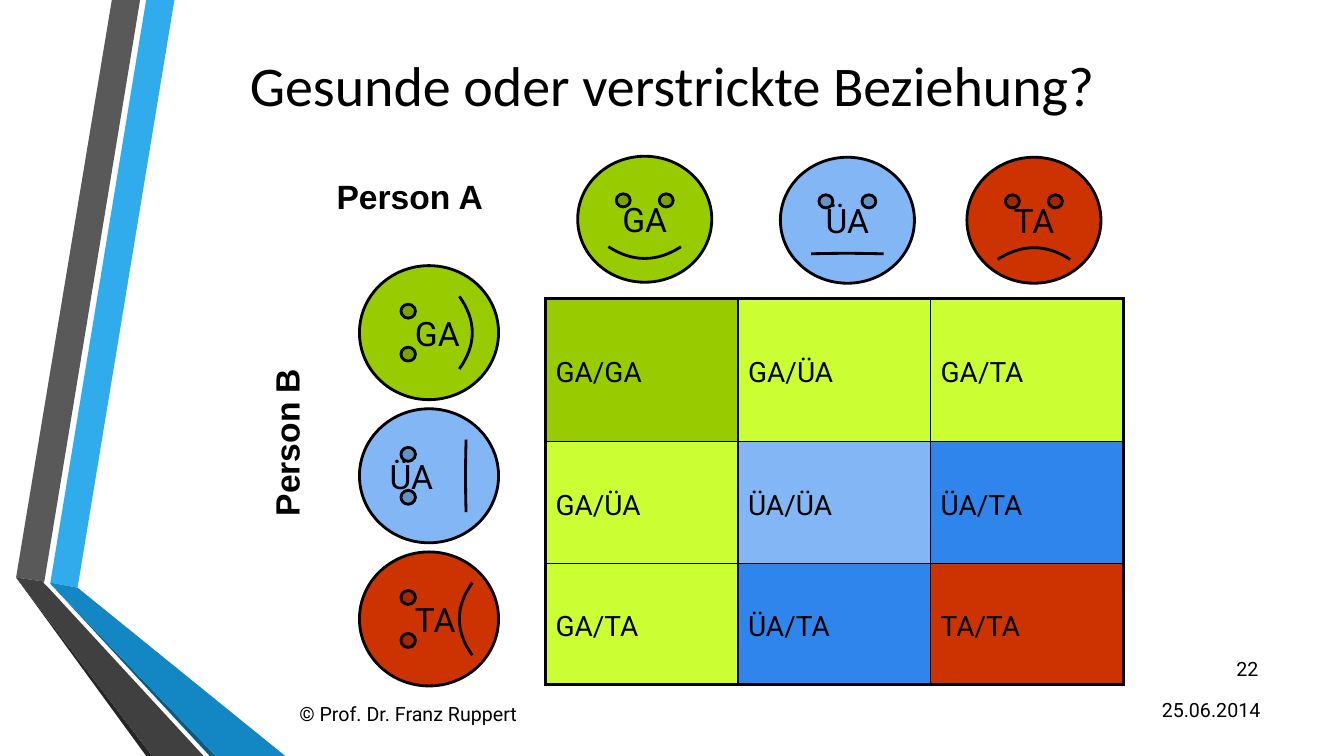
from lxml import etree
from pptx import Presentation
from pptx import util as u
from pptx.dml.color import RGBColor
from pptx.enum import shapes, text
from pptx.oxml.ns import qn

PX = 9144
SIZE = (1333, 750)
HUES = {
    "ink": "000000", "sky": "30ACEC", "grey": "595959", "black": "262626",
    "navy": "0C5A82", "sea": "1287C3", "coal": "404040",
    "green": "99CC00", "lime": "CCFF33", "pale": "82B6F4",
    "blue": "3085ED", "red": "CC3300",
}
BANDS = [
    ("sky", [(50, 578), (77, 583), (173, 0), (145, 0)]),
    ("grey", [(139, 0), (111, 0), (16, 573), (44, 577)]),
    ("black", [(16, 573), (145, 750), (151, 750)]),
    ("navy", [(50, 579), (208, 750), (214, 750)]),
    ("sea", [(50, 579), (214, 750), (283, 750), (77, 583), (50, 578)]),
    ("coal", [(202, 750), (48, 583), (43, 578), (44, 577), (16, 573), (151, 750)]),
]
LEFT, MID, RIGHT = text.PP_ALIGN.LEFT, text.PP_ALIGN.CENTER, text.PP_ALIGN.RIGHT
SMALL = {"size": 14, "name": "Roboto"}
HEAD = {"size": 40, "name": "Calibri"}
BOLD = {"size": 24, "name": "Arial", "bold": True}
CELL = {"size": 20, "name": "Roboto"}
FACE = {"size": 24, "name": "Roboto"}
LABELS = [
    ("25.06.2014", (1135, 684, 125, 40), SMALL, RIGHT, 0),
    ("22", (1198, 643, 60, 40), SMALL, RIGHT, 0),
    ("© Prof. Dr. Franz Ruppert", (287, 688, 775, 40), SMALL, LEFT, 0),
    ("Gesunde oder verstrickte Beziehung?", (202, 12, 929, 143), HEAD, MID, 0),
    ("Person A", (324, 170, 166, 50), BOLD, LEFT, 0),
    ("Person B", (201, 414, 166, 50), BOLD, LEFT, 270),
]
GRID = (541, 296)
COL = 191
ROWS = [142, 121, 120]
CELLS = [
    [("GA/GA", "green"), ("GA/ÜA", "lime"), ("GA/TA", "lime")],
    [("GA/ÜA", "lime"), ("ÜA/ÜA", "pale"), ("ÜA/TA", "blue")],
    [("GA/TA", "lime"), ("ÜA/TA", "blue"), ("TA/TA", "red")],
]
FACES = [
    ("GA", "green", 0.047, 573, 155, 25),
    ("ÜA", "pale", -0.002, 774, 156, 0),
    ("TA", "red", -0.047, 959, 156, 25),
]
SIDE = (359, 261)
STEP = 142


def emu(*vals):
    return [u.Emu(v * PX) for v in vals]


def hue(key):
    return RGBColor.from_string(HUES[key])


def fill(part, key):
    part.fill.solid()
    part.fill.fore_color.rgb = hue(key)


def write(frame, words, font, align=LEFT):
    para = frame.paragraphs[0]
    para.alignment = align
    run = para.add_run()
    run.text = words
    for key, val in font.items():
        setattr(run.font, key, u.Pt(val) if key == "size" else val)
    run.font.color.rgb = hue("ink")
    return para


def draw_bands(slide):
    for key, pts in BANDS:
        path = slide.shapes.build_freeform(*pts[0], scale=PX)
        path.add_line_segments(pts[1:], close=True)
        band = path.convert_to_shape()
        band.shadow.inherit = False
        fill(band, key)
        band.line.fill.background()


def draw_labels(slide):
    for words, place, font, align, turn in LABELS:
        box = slide.shapes.add_textbox(*emu(*place))
        box.rotation = turn
        frame = box.text_frame
        frame.word_wrap = font is not BOLD
        frame.vertical_anchor = text.MSO_ANCHOR.TOP if font is BOLD else text.MSO_ANCHOR.MIDDLE
        write(frame, words, font, align)


def edge(cell, outer):
    props = cell._tc.get_or_add_tcPr()
    for spot, (side, thick) in enumerate(outer.items()):
        line = etree.Element(qn("a:" + side), w=str(u.Pt(2.25 if thick else 1)))
        solid = etree.SubElement(line, qn("a:solidFill"))
        etree.SubElement(solid, qn("a:srgbClr"), val=HUES["ink"])
        props.insert(spot, line)


def draw_grid(slide):
    count = len(ROWS)
    table = slide.shapes.add_table(count, count, *emu(*GRID, COL * count, sum(ROWS))).table
    for col in table.columns:
        col.width = u.Emu(COL * PX)
    for r, line in enumerate(CELLS):
        table.rows[r].height = u.Emu(ROWS[r] * PX)
        for c, (words, key) in enumerate(line):
            cell = table.cell(r, c)
            fill(cell, key)
            cell.vertical_anchor = text.MSO_ANCHOR.MIDDLE
            write(cell.text_frame, words, CELL).line_spacing = 1.2
            edge(cell, {"lnL": c == 0, "lnR": c == count - 1,
                        "lnT": r == 0, "lnB": r == count - 1})


def draw_face(slide, words, key, smile, place, turn=0, indent=0):
    face = slide.shapes.add_shape(shapes.MSO_SHAPE.SMILEY_FACE, *emu(*place))
    face.adjustments[0] = smile
    face.rotation = turn
    face.shadow.inherit = False
    fill(face, key)
    face.line.color.rgb = hue("ink")
    face.line.width = u.Pt(2)
    frame = face.text_frame
    frame.word_wrap = False
    frame.vertical_anchor = text.MSO_ANCHOR.MIDDLE
    para = write(frame, words, FACE, LEFT if indent else MID)
    if turn:
        frame._txBody.bodyPr.set("vert", "eaVert")
        para._p.get_or_add_pPr().set("marL", str(indent * PX))


def draw_faces(slide):
    for n, (words, key, smile, x, y, indent) in enumerate(FACES):
        draw_face(slide, words, key, smile, (x, y, 133, 125))
        side = (SIDE[0], SIDE[1] + n * STEP, 133, 138)
        draw_face(slide, words, key, smile, side, 270, indent)


def main():
    deck = Presentation()
    deck.slide_width, deck.slide_height = emu(*SIZE)
    slide = deck.slides.add_slide(deck.slide_layouts[6])
    for draw in (draw_bands, draw_labels, draw_grid, draw_faces):
        draw(slide)
    deck.save("out.pptx")


if __name__ == "__main__":
    main()
